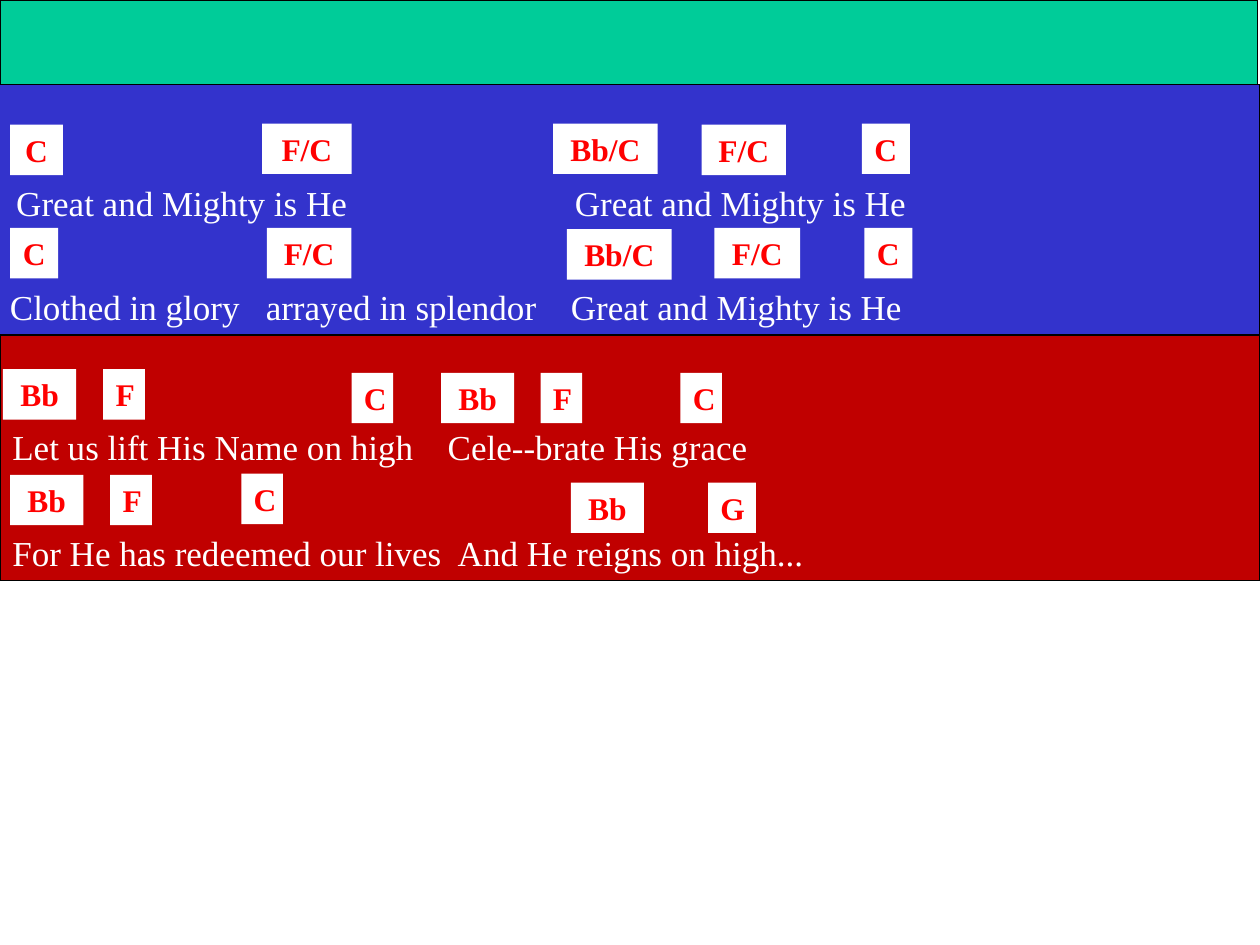
from pptx import Presentation
from pptx.dml.color import RGBColor
from pptx.enum.shapes import MSO_SHAPE
from pptx.enum.text import MSO_ANCHOR, MSO_AUTO_SIZE, PP_ALIGN
from pptx.oxml.ns import qn
from pptx.util import Pt
from lxml import etree

RECT = MSO_SHAPE.RECTANGLE
TOP = MSO_ANCHOR.TOP
GROW = MSO_AUTO_SIZE.SHAPE_TO_FIT_TEXT
LEFT, CENTER = PP_ALIGN.LEFT, PP_ALIGN.CENTER

FONT = "Times New Roman"
COLORS = {
    "header": "00CC99",
    "verse": "3333CC",
    "chorus": "C00000",
    "line": "000000",
    "white": "FFFFFF",
    "chord": "FF0000",
}
CHORD_HEIGHT = 28.8

# Chords: label, left, top, width
VERSE_CHORDS = [
    ("C", 5.8, 71.3, 30.2),
    ("F/C", 149.8, 70.6, 51.1),
    ("Bb/C", 316.1, 70.6, 59.8),
    ("F/C", 401, 71.3, 48.2),
    ("C", 492.5, 70.6, 27.4),
    ("C", 5.8, 130.3, 27.4),
    ("F/C", 152.6, 130.3, 48.2),
    ("Bb/C", 324, 131, 59.8),
    ("F/C", 408.2, 130.3, 49),
    ("C", 493.9, 130.3, 27.4),
]
CHORUS_CHORDS = [
    ("Bb", 1.7, 211, 41.8),
    ("F", 59, 211, 23.8),
    ("C", 200.9, 213.1, 23.8),
    ("Bb", 252, 213.1, 41.8),
    ("F", 308.9, 213.1, 23.8),
    ("C", 388.8, 213.1, 23.8),
    ("Bb", 5.8, 271.4, 41.8),
    ("F", 63, 271.4, 23.8),
    ("C", 137.9, 270.7, 23.8),
    ("Bb", 326.2, 275.8, 41.8),
    ("G", 404.6, 275.8, 27.4),
]
# Lyrics: phrases, tab stops, left, top, height, line spacing
LYRICS = [
    (["Great and Mighty is He", "Great and Mighty is He"],
     [319.2], 2.2, 90.7, 41, 1.4),
    (["Clothed in glory", "arrayed in splendor", "Great and Mighty is He"],
     [146.2, 320.5], -1.4, 149.8, 41, 1.4),
    (["Let us lift His Name on high", "Cele--brate His grace"],
     [248.8], 0, 239.8, 31.7, 1),
    (["For He has redeemed our lives", "And He reigns on high..."],
     [254.5], 0, 300.2, 31.7, 1),
]


def rgb(name):
    return RGBColor.from_string(COLORS[name])


def add_rect(slide, left, top, width, height, fill):
    sp = slide.shapes.add_shape(RECT, Pt(left), Pt(top), Pt(width), Pt(height))
    sp.shadow.inherit = False
    sp.fill.solid()
    sp.fill.fore_color.rgb = rgb(fill)
    sp.line.fill.background()
    return sp


def add_band(slide, left, top, width, height, fill):
    sp = add_rect(slide, left, top, width, height, fill)
    sp.line.color.rgb = rgb("line")
    sp.line.width = Pt(0.75)


def write_text(sp, text, size, color, align, bold=False):
    tf = sp.text_frame
    tf.word_wrap = True
    tf.auto_size = GROW
    tf.vertical_anchor = TOP
    p = tf.paragraphs[0]
    p.alignment = align
    r = p.add_run()
    r.text = text
    r.font.name = FONT
    r.font.size = Pt(size)
    r.font.bold = bold
    r.font.color.rgb = rgb(color)
    return p


def add_chord(slide, label, left, top, width):
    sp = add_rect(slide, left, top, width, CHORD_HEIGHT, "white")
    write_text(sp, label, 18, "chord", CENTER, bold=True)


def add_lyric(slide, phrases, stops, left, top, height, spacing):
    sp = slide.shapes.add_textbox(Pt(left), Pt(top), Pt(720), Pt(height))
    p = write_text(sp, "\t".join(phrases), 20, "white", LEFT)
    p.line_spacing = spacing
    # Tab stops place each phrase under its chords
    tabs = etree.SubElement(p._p.get_or_add_pPr(), qn("a:tabLst"))
    for stop in stops:
        etree.SubElement(tabs, qn("a:tab"), pos=str(Pt(stop)), algn="l")


def main():
    prs = Presentation()
    prs.slide_width, prs.slide_height = Pt(720), Pt(540)
    slide = prs.slides.add_slide(prs.slide_layouts[6])

    # Background bands
    add_band(slide, 0, 191.5, 720, 140.4, "chorus")
    add_band(slide, -1.4, 48.2, 721.4, 143.3, "verse")

    # Chords and lyrics
    for chord in VERSE_CHORDS:
        add_chord(slide, *chord)
    for lyric in LYRICS:
        add_lyric(slide, *lyric)
    for chord in CHORUS_CHORDS:
        add_chord(slide, *chord)

    # Header band
    add_band(slide, 0, 0, 718.6, 48.2, "header")

    prs.save("out.pptx")


if __name__ == "__main__":
    main()
